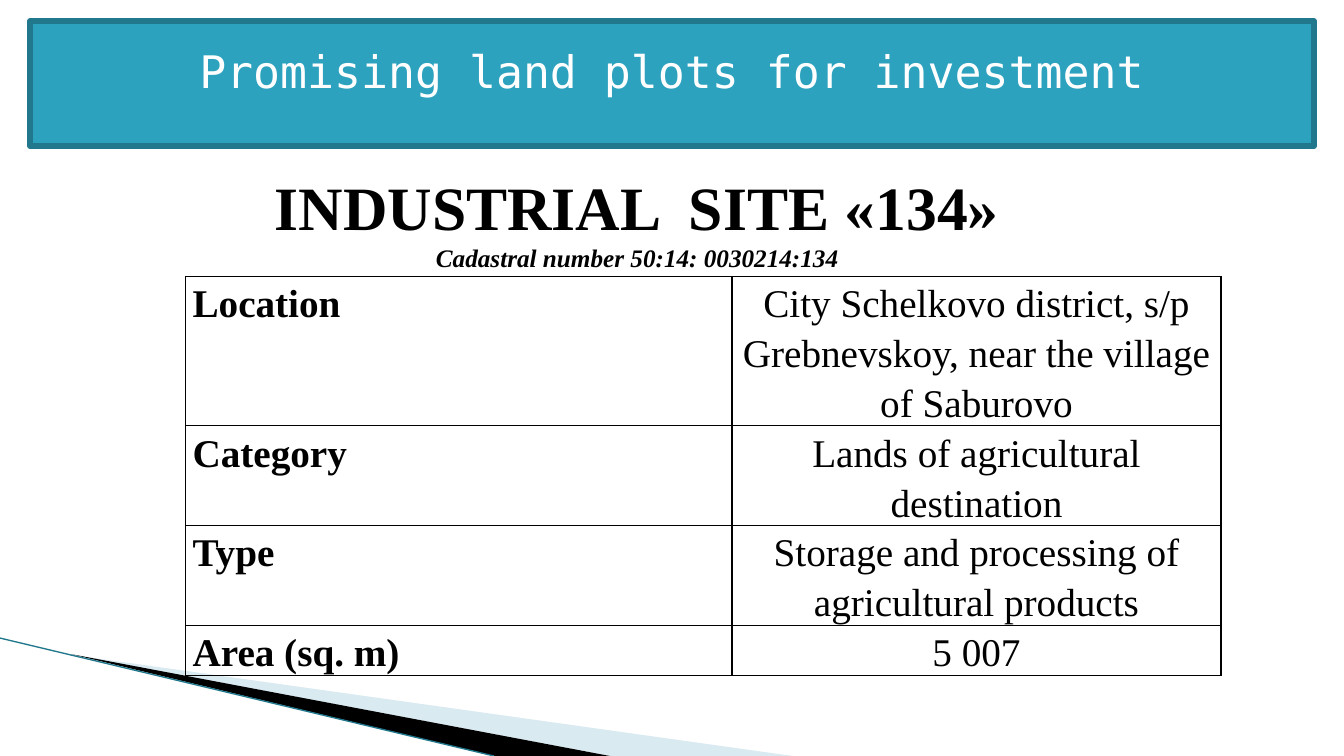
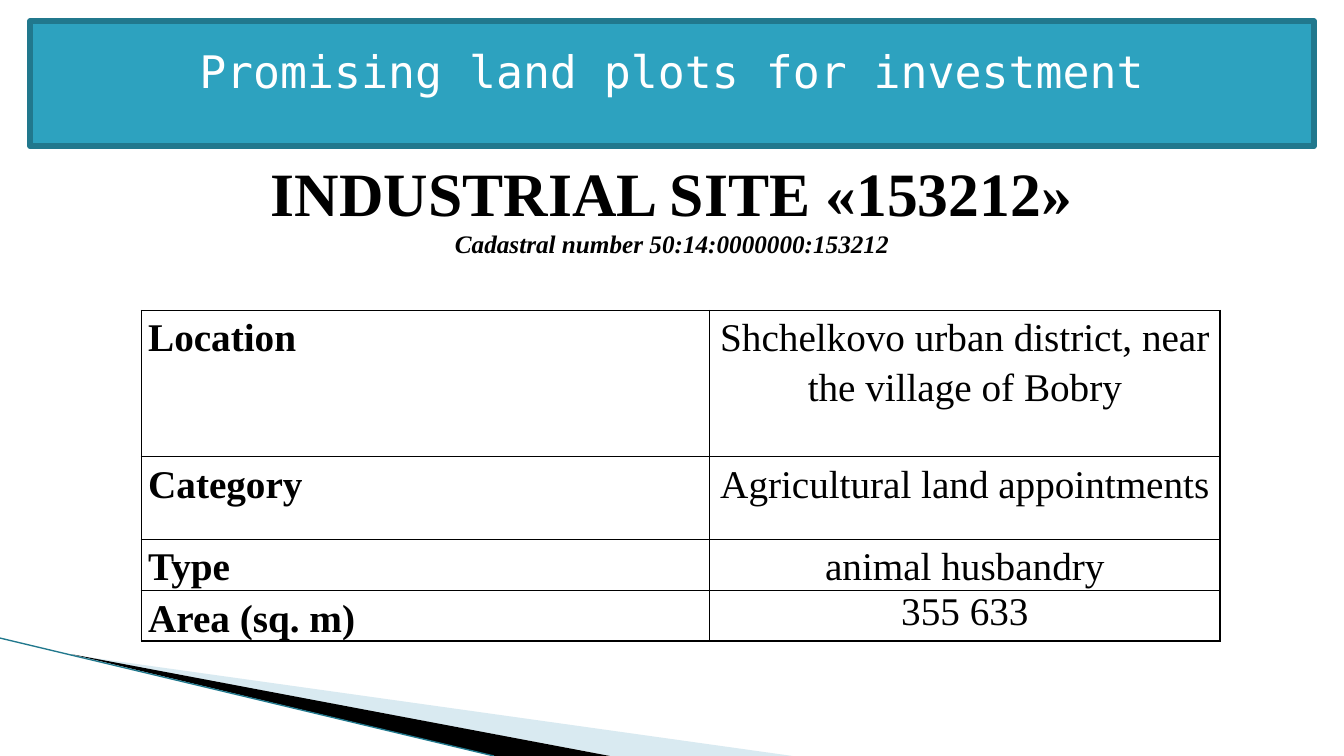
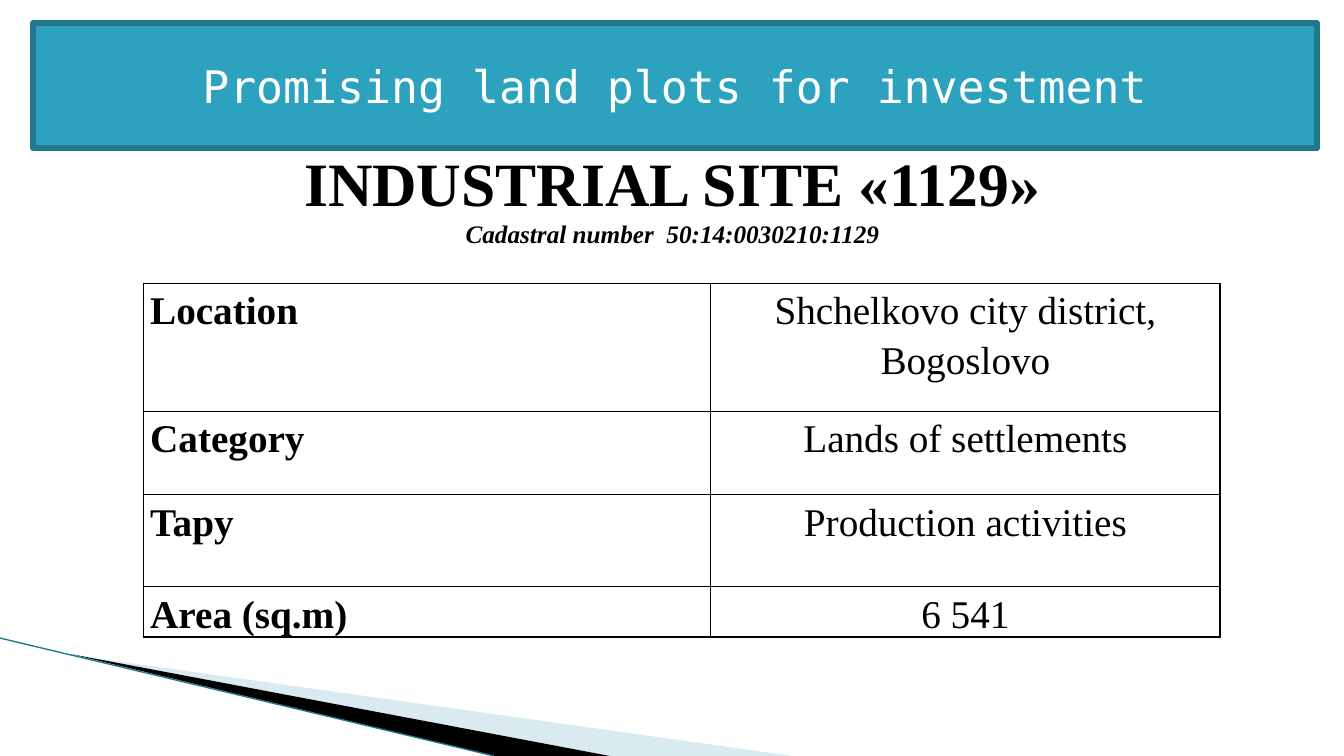
from dataclasses import dataclass

from lxml.etree import SubElement
from pptx import Presentation
from pptx.dml.color import RGBColor
from pptx.enum.shapes import MSO_CONNECTOR, MSO_SHAPE
from pptx.enum.text import MSO_ANCHOR, PP_ALIGN
from pptx.oxml.ns import qn
from pptx.slide import Slide
from pptx.util import Inches, Pt

WHITE, BLACK, TEAL, DARK, PALE = "FFFFFF", "000000", "2DA2BF", "21788D", "A0CBDC"
SERIF, MONO = "Times New Roman", "DejaVu Sans Mono"
TITLE = "Promising land plots for investment"


@dataclass(frozen=True)
class Box:
    left: float
    top: float
    width: float
    height: float

    def emu(self) -> list:
        return [Inches(v) for v in (self.left, self.top, self.width, self.height)]


@dataclass(frozen=True)
class Fact:
    label: str
    value: str
    height: float
    spacing: float = 1.15


@dataclass(frozen=True)
class Grid:
    left: float
    top: float
    widths: tuple
    facts: tuple

    def box(self) -> Box:
        height = sum(fact.height for fact in self.facts)
        return Box(self.left, self.top, sum(self.widths), height)


@dataclass(frozen=True)
class Site:
    name: str
    number: str
    head: Box
    grid: Grid
    band: Box = Box(left=0.3, top=0.21, width=12.73, height=1.24)
    foot: float = 0.31


@dataclass(frozen=True)
class Wedge:
    points: tuple
    color: str
    alpha: int


WEDGES = (
    Wedge(points=((0.73, 6.5), (7.86, 7.5), (6.05, 7.5)), color=PALE, alpha=40),
    Wedge(points=((0.71, 6.49), (6.05, 7.5), (4.9, 7.5)), color=BLACK, alpha=100),
)

SITES = (
    Site(
        name="INDUSTRIAL  SITE «134»",
        number="Cadastral number 50:14: 0030214:134",
        head=Box(left=2.59, top=1.62, width=7.46, height=1.14),
        grid=Grid(left=1.84, top=2.74, widths=(5.42, 4.85), facts=(
            Fact("Location", height=1.48,
                 value="City Schelkovo district, s/p Grebnevskoy, near the village of Saburovo"),
            Fact("Category", height=0.99, value="Lands of agricultural destination"),
            Fact("Type", height=0.99, value="Storage and processing of agricultural products"),
            Fact("Area (sq. m)", height=0.5, value="5 007"),
        )),
    ),
    Site(
        name="INDUSTRIAL SITE «153212»",
        number="Cadastral number 50:14:0000000:153212",
        head=Box(left=0, top=1.48, width=13.33, height=1.14),
        grid=Grid(left=1.4, top=3.08, widths=(5.64, 5.06), facts=(
            Fact("Location", height=1.45,
                 value="Shchelkovo urban district, near the village of Bobry"),
            Fact("Category", height=0.82, value="Agricultural land appointments"),
            Fact("Type", height=0.51, value="animal husbandry"),
            Fact("Area (sq. m)", height=0.5, value="355 633", spacing=1.0),
        )),
    ),
    Site(
        name="INDUSTRIAL SITE «1129»",
        number="Cadastral number  50:14:0030210:1129",
        head=Box(left=2.88, top=1.38, width=7.58, height=1.14),
        grid=Grid(left=1.42, top=2.81, widths=(5.63, 5.05), facts=(
            Fact("Location", height=1.27, value="Shchelkovo city district, Bogoslovo"),
            Fact("Category", height=0.83, value="Lands of settlements"),
            Fact("Tapy", height=0.91, value="Production activities"),
            Fact("Area (sq.m)", height=0.5, value="6 541"),
        )),
        band=Box(left=0.33, top=0.23, width=12.73, height=1.24),
        foot=0.05,
    ),
)


def rgb(code: str) -> RGBColor:
    return RGBColor.from_string(code)


def paint(fill, code: str) -> None:
    fill.solid()
    fill.fore_color.rgb = rgb(code)


def write(para, text: str, size: float, face: str = SERIF, color: str = BLACK,
          bold: bool = False, slant: bool = False, align=PP_ALIGN.CENTER) -> None:
    para.alignment = align
    run = para.add_run()
    run.text = text
    font = run.font
    font.size, font.name, font.bold, font.italic = Pt(size), face, bold, slant
    font.color.rgb = rgb(color)


def draw_base(slide: Slide) -> None:
    paint(slide.background.fill, WHITE)
    for wedge in WEDGES:
        first, *rest = [(Inches(x), Inches(y)) for x, y in wedge.points]
        pen = slide.shapes.build_freeform(*first)
        pen.add_line_segments(rest)
        shape = pen.convert_to_shape()
        shape.shadow.inherit = False
        paint(shape.fill, wedge.color)
        shape.line.fill.background()
        if wedge.alpha < 100:
            tone = shape._element.spPr.find(".//" + qn("a:srgbClr"))
            SubElement(tone, qn("a:alpha"), val=str(wedge.alpha * 1000))
    edge = slide.shapes.add_connector(
        MSO_CONNECTOR.STRAIGHT, Inches(0), Inches(6.33), Inches(4.9), Inches(7.5))
    edge.line.color.rgb = rgb(DARK)
    edge.line.width = Pt(0.95)
    SubElement(edge._element.spPr, qn("a:effectLst"))


def draw_band(slide: Slide, site: Site) -> None:
    band = slide.shapes.add_shape(MSO_SHAPE.RECTANGLE, *site.band.emu())
    band.shadow.inherit = False
    paint(band.fill, TEAL)
    band.line.color.rgb = rgb(DARK)
    band.line.width = Pt(4.33)
    frame = band.text_frame
    frame.vertical_anchor = MSO_ANCHOR.MIDDLE
    frame.margin_bottom = Inches(site.foot)
    write(frame.paragraphs[0], TITLE, 32, face=MONO, color=WHITE)


def draw_head(slide: Slide, site: Site) -> None:
    frame = slide.shapes.add_textbox(*site.head.emu()).text_frame
    frame.word_wrap = True
    frame.vertical_anchor = MSO_ANCHOR.MIDDLE
    write(frame.paragraphs[0], site.name, 44, bold=True)
    write(frame.add_paragraph(), site.number, 18, bold=True, slant=True)


def frame_cell(cell) -> None:
    props = cell._tc.get_or_add_tcPr()
    for side in ("lnL", "lnR", "lnT", "lnB"):
        line = SubElement(props, qn("a:" + side), w=str(Pt(1)))
        solid = SubElement(line, qn("a:solidFill"))
        SubElement(solid, qn("a:srgbClr"), val=BLACK)
    cell.fill.background()
    cell.margin_left = cell.margin_right = Inches(0.07)
    cell.margin_top = cell.margin_bottom = 0


def fill_cell(cell, text: str, spacing: float, bold: bool, align) -> None:
    frame_cell(cell)
    para = cell.text_frame.paragraphs[0]
    para.line_spacing = spacing
    write(para, text, 28, bold=bold, align=align)


def draw_table(slide: Slide, grid: Grid) -> None:
    table = slide.shapes.add_table(
        len(grid.facts), len(grid.widths), *grid.box().emu()).table
    table.first_row = table.horz_banding = False
    for col, width in zip(table.columns, grid.widths):
        col.width = Inches(width)
    for row, fact in zip(table.rows, grid.facts):
        row.height = Inches(fact.height)
        label, value = row.cells
        fill_cell(label, fact.label, 1.15, True, PP_ALIGN.LEFT)
        fill_cell(value, fact.value, fact.spacing, False, PP_ALIGN.CENTER)


def main() -> None:
    deck = Presentation()
    deck.slide_width, deck.slide_height = Inches(13.33), Inches(7.5)
    for site in SITES:
        slide = deck.slides.add_slide(deck.slide_layouts[6])
        draw_base(slide)
        draw_band(slide, site)
        draw_table(slide, site.grid)
        draw_head(slide, site)
    deck.save("out.pptx")


if __name__ == "__main__":
    main()
